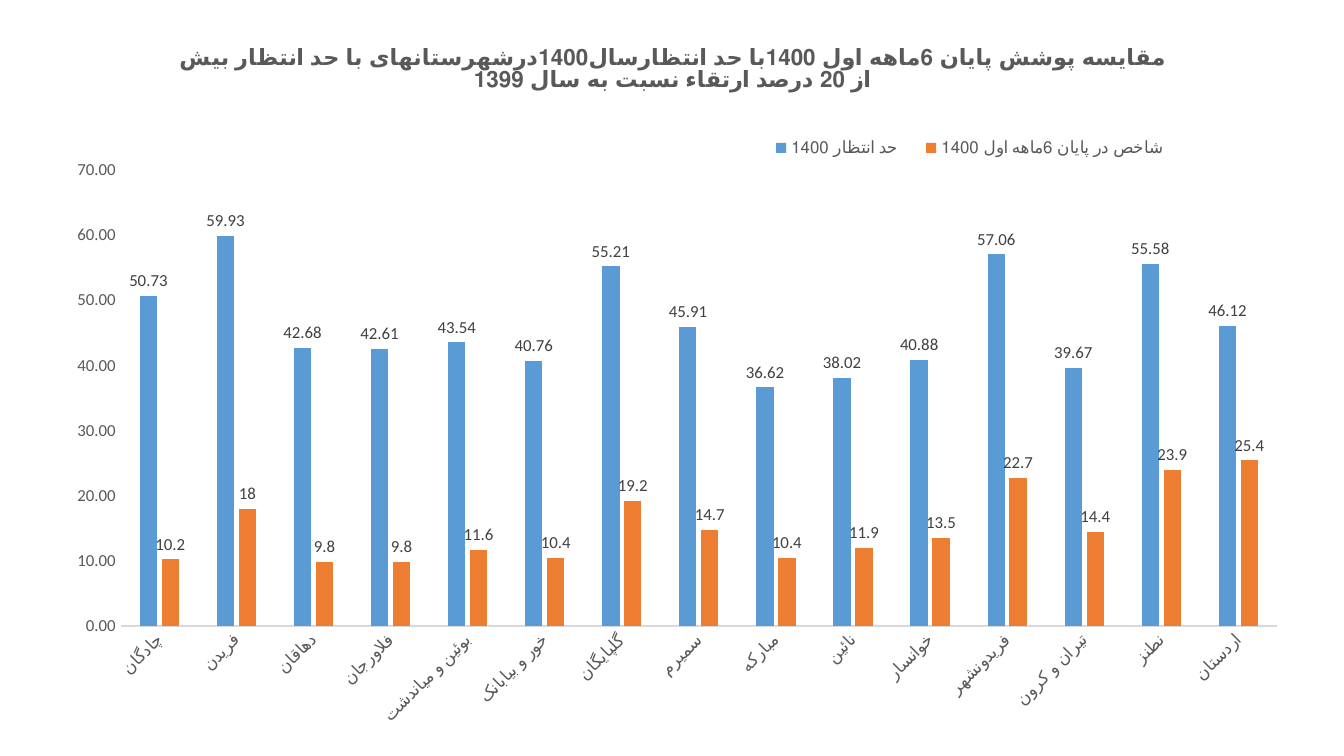
from lxml.etree import SubElement
from pptx import Presentation
from pptx.chart.data import CategoryChartData
from pptx.dml.color import RGBColor
from pptx.enum.chart import XL_CHART_TYPE, XL_LABEL_POSITION, XL_LEGEND_POSITION, XL_TICK_MARK
from pptx.oxml.ns import qn
from pptx.util import Inches, Pt

COLORS = {"expected": "5B9BD5", "achieved": "ED7D31", "text": "595959", "label": "404040", "axis": "D9D9D9"}
FONT = "Calibri"
TITLE = ("مقایسه پوشش پایان 6ماهه اول 1400با حد انتظارسال1400درشهرستانهای "
         "با حد انتظار بیش از 20 درصد ارتقاء نسبت به سال 1399")
EXPECTED = "حد انتظار 1400"
ACHIEVED = "شاخص در پایان 6ماهه اول 1400"
COUNTIES = [
    ("چادگان", 50.73, 10.2),
    ("فریدن", 59.93, 18),
    ("دهاقان", 42.68, 9.8),
    ("فلاورجان", 42.61, 9.8),
    ("بوئین و میاندشت", 43.54, 11.6),
    ("خور و بیابانک", 40.76, 10.4),
    ("گلپایگان", 55.21, 19.2),
    ("سمیرم", 45.91, 14.7),
    ("مبارکه", 36.62, 10.4),
    ("نائین", 38.02, 11.9),
    ("خوانسار", 40.88, 13.5),
    ("فریدونشهر", 57.06, 22.7),
    ("تیران و کرون", 39.67, 14.4),
    ("نطنز", 55.58, 23.9),
    ("اردستان", 46.12, 25.4),
]


def color(name):
    """Return the named colour."""
    return RGBColor.from_string(COLORS[name])


def style_font(font, size, color_name, bold=False):
    """Set typeface, size, colour and weight."""
    font.name = FONT
    font.size = Pt(size)
    font.bold = bold
    font.color.rgb = color(color_name)


def place(element, predecessor, inner=False, **fractions):
    """Give a chart part a manual layout in fractions of the chart."""
    for old_layout in element.findall(qn("c:layout")):
        element.remove(old_layout)
    layout = SubElement(element, qn("c:layout"))
    manual = SubElement(layout, qn("c:manualLayout"))
    if inner:
        SubElement(manual, qn("c:layoutTarget")).set("val", "inner")
    for key in ("x", "y"):
        SubElement(manual, qn(f"c:{key}Mode")).set("val", "edge")
    for key, value in fractions.items():
        SubElement(manual, qn(f"c:{key}")).set("val", str(value))
    if predecessor is None:
        element.insert(0, layout)
    else:
        element.find(qn(predecessor)).addnext(layout)


def add_county_chart(slide):
    """Add the clustered columns and return the chart."""
    data = CategoryChartData()
    names, expected, achieved = zip(*COUNTIES)
    data.categories = names
    data.add_series(EXPECTED, expected, "0.00")
    data.add_series(ACHIEVED, achieved, "General")
    frame = slide.shapes.add_chart(
        XL_CHART_TYPE.COLUMN_CLUSTERED, Inches(0.32), Inches(0.14), Inches(9.35), Inches(5.34), data)
    chart = frame.chart
    style_font(chart.font, 10, "text")
    place(chart.plots[0]._element.getparent(), None, inner=True, x=0.062, y=0.211, w=0.92, h=0.635)
    return chart


def format_title(chart):
    """Write the bold right-to-left chart title."""
    title = chart.chart_title
    paragraph = title.text_frame.paragraphs[0]
    paragraph._p.get_or_add_pPr().set("rtl", "1")
    run = paragraph.add_run()
    run.text = TITLE
    style_font(run.font, 12, "text", bold=True)
    title.include_in_layout = False
    place(title._element, "c:tx", x=0.105, y=0.03)


def format_legend(chart):
    """Place the legend above the columns at the right."""
    chart.has_legend = True
    legend = chart.legend
    legend.position = XL_LEGEND_POSITION.BOTTOM
    legend.include_in_layout = False
    style_font(legend.font, 9, "text")
    place(legend._element, "c:legendPos", x=0.565, y=0.145, w=0.345, h=0.07)


def format_axes(chart):
    """Format the slanted county names and the value scale."""
    for axis in (chart.category_axis, chart.value_axis):
        axis.has_major_gridlines = False
        axis.major_tick_mark = XL_TICK_MARK.NONE
        axis.minor_tick_mark = XL_TICK_MARK.NONE
        style_font(axis.tick_labels.font, 9, "text")
    category_line = chart.category_axis.format.line
    category_line.color.rgb = color("axis")
    category_line.width = Pt(0.75)
    text_body = chart.category_axis._element.find(qn("c:txPr")).find(qn("a:bodyPr"))
    text_body.set("rot", "-2700000")
    text_body.set("vert", "horz")
    value_axis = chart.value_axis
    value_axis.format.line.fill.background()
    value_axis.minimum_scale = 0
    value_axis.maximum_scale = 70
    value_axis.major_unit = 10
    value_axis.tick_labels.number_format = "0.00"
    value_axis.tick_labels.number_format_is_linked = False


def format_series(chart):
    """Colour the columns and show their values."""
    plot = chart.plots[0]
    plot.gap_width = 219
    plot.overlap = -27
    plot.vary_by_categories = False
    for series, name, number_format in zip(plot.series, ("expected", "achieved"), ("0.00", "General")):
        series.format.fill.solid()
        series.format.fill.fore_color.rgb = color(name)
        labels = series.data_labels
        labels.show_value = True
        labels.position = XL_LABEL_POSITION.OUTSIDE_END
        labels.number_format = number_format
        labels.number_format_is_linked = False
        style_font(labels.font, 9, "label")


def main():
    """Build and save the slide."""
    presentation = Presentation()
    presentation.slide_width = Inches(10)
    presentation.slide_height = Inches(10) * 9 // 16
    slide = presentation.slides.add_slide(presentation.slide_layouts[6])
    chart = add_county_chart(slide)
    format_title(chart)
    format_legend(chart)
    format_axes(chart)
    format_series(chart)
    presentation.save("out.pptx")


if __name__ == "__main__":
    main()
